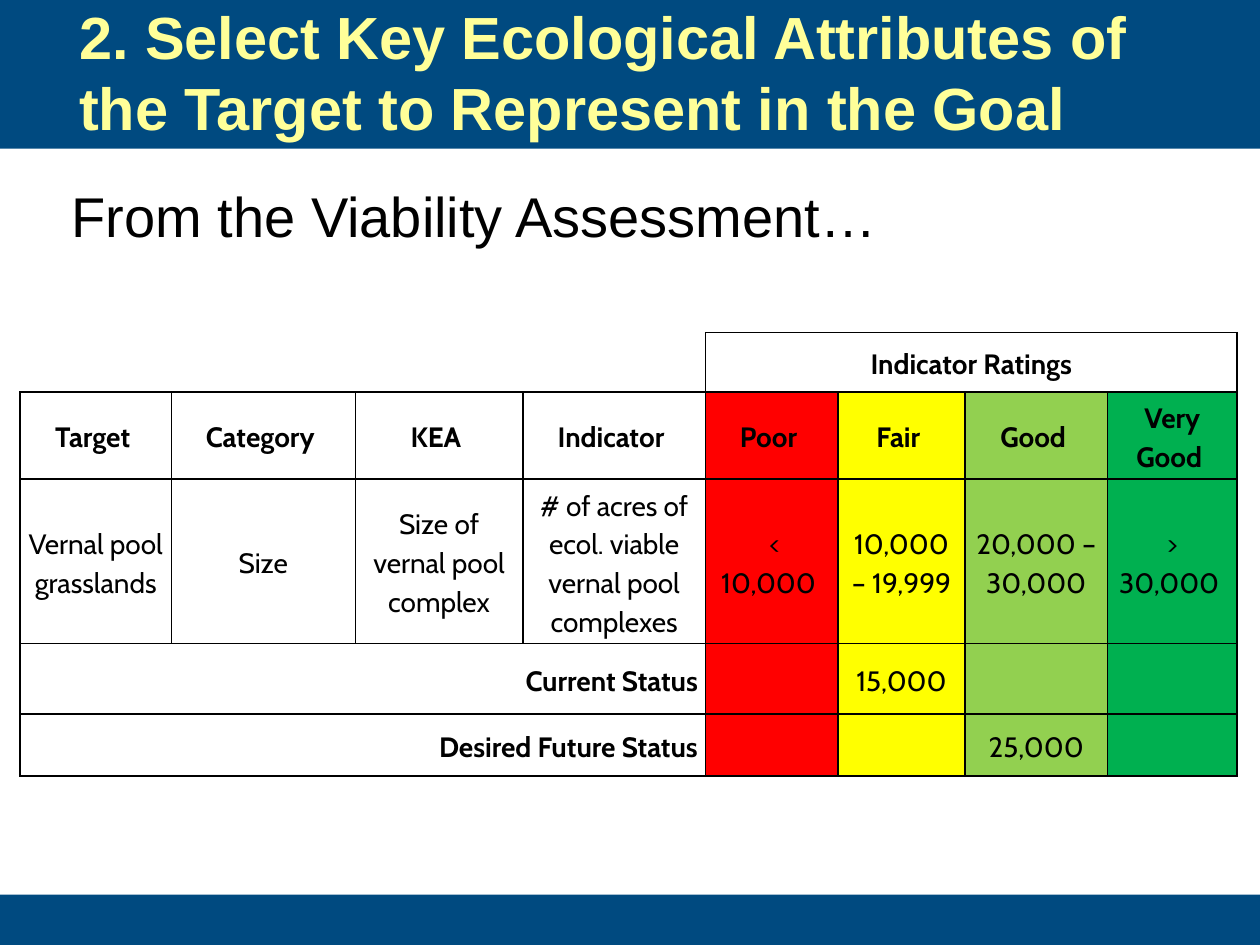
from lxml import etree
from pptx import Presentation
from pptx import util as u
from pptx.dml.color import RGBColor
from pptx.enum import shapes, text
from pptx.oxml.ns import qn

NAVY, BLACK = "004A80", "000000"
RATING_FILLS = ["FF0000", "FFFF00", "92D050", "00B050"]
CENTER, RIGHT = text.PP_ALIGN.CENTER, text.PP_ALIGN.RIGHT


def put_text(tf, words, size=16, font="Cabin", color=BLACK, bold=False,
             align=text.PP_ALIGN.LEFT, line=1.0, after=0):
    tf.word_wrap = True
    p = tf.paragraphs[0]
    p.alignment, p.line_spacing, p.space_after = align, line, u.Pt(after)
    r = p.add_run()
    r.text = words
    r.font.size, r.font.name, r.font.bold = u.Pt(size), font, bold
    r.font.color.rgb = RGBColor.from_string(color)


def set_borders(cell, sides):
    """Draw 1 pt black lines on the given sides (of "LRTB"), none on the others."""
    tc_pr = cell._tc.get_or_add_tcPr()
    for side in "LRTB":
        ln = etree.SubElement(tc_pr, qn(f"a:ln{side}"), w=str(u.Pt(1)))
        if side in sides:
            fill = etree.SubElement(ln, qn("a:solidFill"))
            etree.SubElement(fill, qn("a:srgbClr"), val=BLACK)
        else:
            etree.SubElement(ln, qn("a:noFill"))


prs = Presentation()
prs.slide_width, prs.slide_height = W, H = u.Inches(10), u.Inches(7.5)
s = prs.slides.add_slide(prs.slide_layouts[6])

# Bands at the foot and the head
for top, height in [(7.1, 0.4), (0, 1.18)]:
    band = s.shapes.add_shape(shapes.MSO_SHAPE.RECTANGLE, 0, u.Inches(top), W, u.Inches(height))
    band.shadow.inherit = False
    band.fill.solid()
    band.fill.fore_color.rgb = RGBColor.from_string(NAVY)
    band.line.fill.background()

title = s.shapes.add_textbox(*map(u.Inches, (0.53, 0.23, 9.08, 0.67)))
title.text_frame.vertical_anchor = text.MSO_ANCHOR.MIDDLE
put_text(title.text_frame, "2. Select Key Ecological Attributes of the Target to Represent in the Goal",
         size=34, font="Arial", color="FFFF99", bold=True)
lead = s.shapes.add_textbox(*map(u.Inches, (0.47, 1.39, 9.06, 0.64)))
put_text(lead.text_frame, "From the Viability Assessment…", size=32, font="Arial")

# Viability table: four descriptive columns, then four rating columns
col_widths = [1.2, 1.46, 1.33, 1.45, 1.05, 1.01, 1.13, 1.03]
row_heights = [0.47, 0.68, 1.3, 0.56, 0.49]
rows = [
    ["", "", "", "", "Indicator Ratings", "", "", ""],
    ["Target ", "Category ", "KEA ", "Indicator ", "Poor ", "Fair ", "Good ", "Very Good "],
    ["Vernal pool grasslands", "Size", "Size of vernal pool complex",
     "# of acres of ecol. viable vernal pool complexes",
     " < 10,000 ", "10,000 – 19,999", "20,000 – 30,000", "> 30,000 "],
    ["Current Status", "", "", "", "", "15,000", "", ""],
    ["Desired Future Status", "", "", "", "", "", "25,000", ""],
]
frame = s.shapes.add_table(len(rows), len(col_widths), u.Inches(0.16), u.Inches(2.64),
                           u.Inches(sum(col_widths)), u.Inches(sum(row_heights)))
table = frame.table
table.first_row = table.horz_banding = False
for column, width in zip(table.columns, col_widths):
    column.width = u.Inches(width)
for row, height in zip(table.rows, row_heights):
    row.height = u.Inches(height)
for i, first in [(0, 4), (3, 0), (4, 0)]:
    table.cell(i, first).merge(table.cell(i, first + 3))

for i, row in enumerate(rows):
    for j, words in enumerate(row):
        cell = table.cell(i, j)
        if i == 0 and j < 4:
            set_borders(cell, "RB" if j == 3 else "B")
        else:
            set_borders(cell, "LRTB")
        if i > 0 and j >= 4:
            cell.fill.solid()
            cell.fill.fore_color.rgb = RGBColor.from_string(RATING_FILLS[j - 4])
        else:
            cell.fill.background()
        cell.vertical_anchor = text.MSO_ANCHOR.MIDDLE
        cell.margin_left = cell.margin_right = u.Inches(0.06)
        cell.margin_top = cell.margin_bottom = u.Inches(0.04)
        if words:
            status_label = i >= 3 and j == 0
            put_text(cell.text_frame, words, bold=i < 2 or status_label,
                     align=RIGHT if status_label else CENTER, line=1.15, after=3.9)

prs.save("out.pptx")
